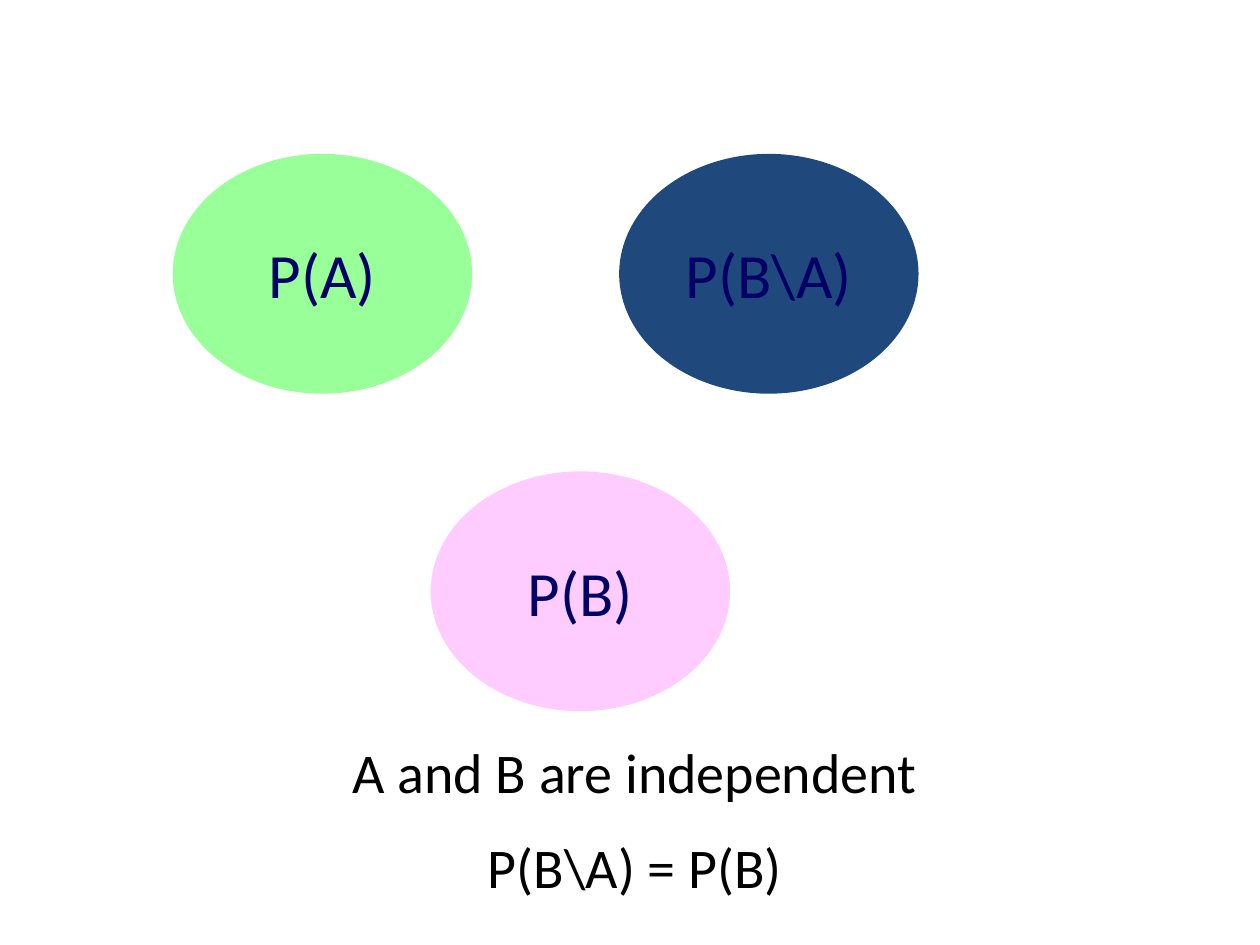
from pptx import Presentation
from pptx.dml.color import RGBColor
from pptx.enum.shapes import MSO_SHAPE
from pptx.enum.text import MSO_ANCHOR, MSO_AUTO_SIZE, PP_ALIGN
from pptx.util import Cm, Pt

OVAL = MSO_SHAPE.OVAL
MIDDLE = MSO_ANCHOR.MIDDLE
CENTER = PP_ALIGN.CENTER
FIT_SHAPE = MSO_AUTO_SIZE.SHAPE_TO_FIT_TEXT

GREEN = RGBColor(0x99, 0xFF, 0x99)
PINK = RGBColor(0xFF, 0xCC, 0xFF)
BLUE = RGBColor(0x1F, 0x49, 0x7D)
NAVY = RGBColor(0x00, 0x00, 0x66)
BLACK = RGBColor(0x00, 0x00, 0x00)

FONT = "Calibri"
OVAL_W, OVAL_H = Cm(6), Cm(4.8)
LEFT = Cm(3.5)
TOP_ROW = Cm(3.12)


def add_run(p, text, size, color):
    p.alignment = CENTER
    r = p.add_run()
    r.text = text
    r.font.name = FONT
    r.font.size = Pt(size)
    r.font.color.rgb = color


def add_oval(slide, left, top, text, color):
    sp = slide.shapes.add_shape(OVAL, left, top, OVAL_W, OVAL_H)
    sp.shadow.inherit = False
    sp.fill.solid()
    sp.fill.fore_color.rgb = color
    sp.line.color.rgb = color
    sp.line.width = Pt(1)
    tf = sp.text_frame
    tf.word_wrap = False
    tf.vertical_anchor = MIDDLE
    add_run(tf.paragraphs[0], text, 36, NAVY)


def add_statement(slide, left, top, width, height, lines):
    tf = slide.shapes.add_textbox(left, top, width, height).text_frame
    tf.word_wrap = True
    tf.auto_size = FIT_SHAPE
    for i, line in enumerate(lines):
        p = tf.add_paragraph() if i else tf.paragraphs[0]
        if i:
            p.space_before = Pt(16)
        add_run(p, line, 32, BLACK)


def main():
    prs = Presentation()
    prs.slide_width, prs.slide_height = Cm(25.4), Cm(19.05)
    slide = prs.slides.add_slide(prs.slide_layouts[6])
    add_oval(slide, LEFT, TOP_ROW, "P(A)", GREEN)
    add_oval(slide, Cm(8.7), Cm(9.52), "P(B)", PINK)
    add_oval(slide, Cm(12.5), TOP_ROW, "P(B\\A)", BLUE)
    add_statement(slide, LEFT, Cm(14.74), Cm(18.6), Cm(3.63),
                  ["A and B are independent", "P(B\\A) = P(B)"])
    prs.save("out.pptx")


if __name__ == "__main__":
    main()
